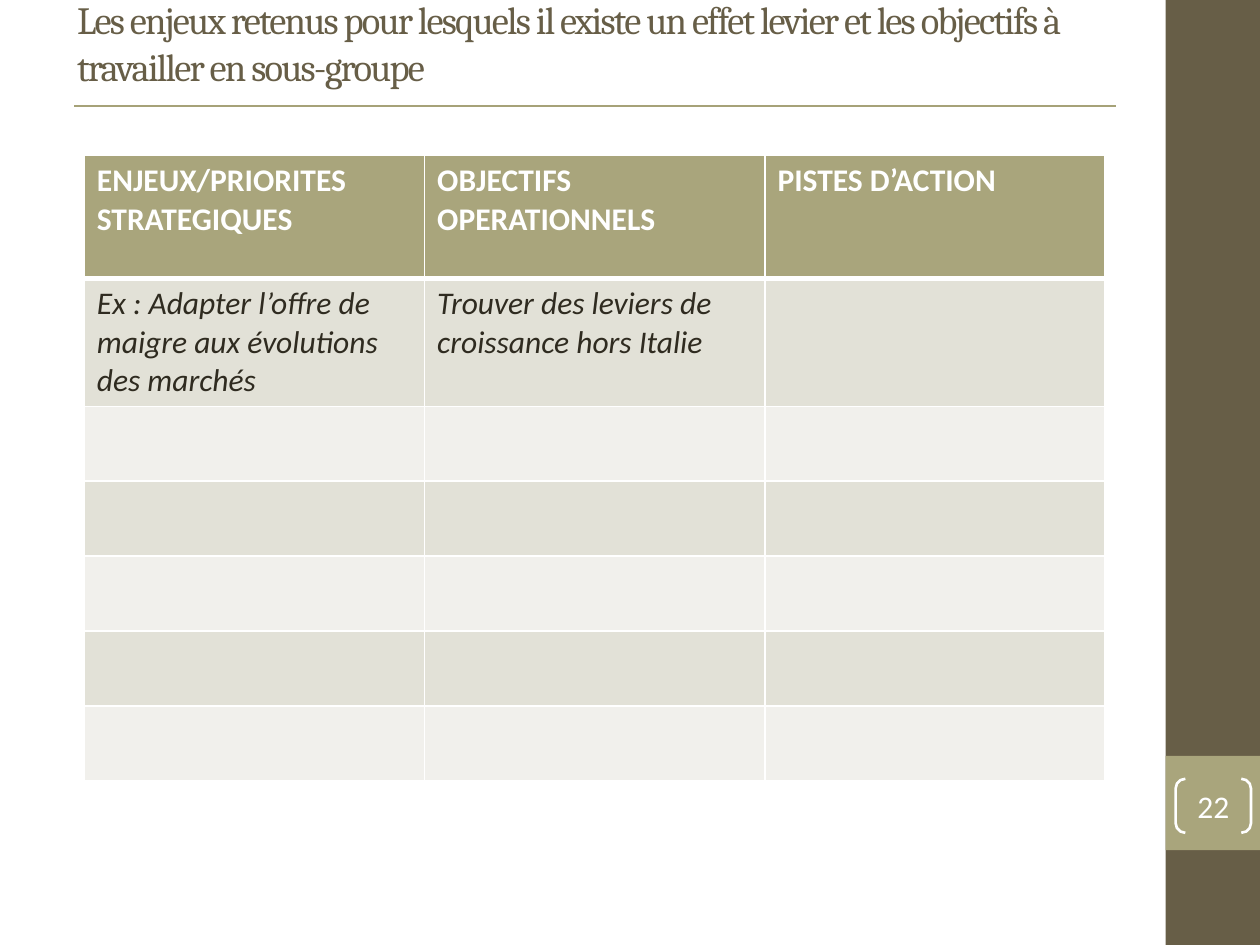
"""Build the slide of strategic priorities, objectives and lines of action."""
from lxml import etree
from pptx import Presentation
from pptx.dml.color import RGBColor
from pptx.enum.shapes import MSO_CONNECTOR, MSO_SHAPE
from pptx.enum.text import MSO_ANCHOR, MSO_AUTO_SIZE, PP_ALIGN
from pptx.oxml.ns import qn
from pptx.util import Cm, Pt

RECT, BRACKETS = MSO_SHAPE.RECTANGLE, MSO_SHAPE.DOUBLE_BRACKET
STRAIGHT = MSO_CONNECTOR.STRAIGHT
MIDDLE, LEFT, CENTER = MSO_ANCHOR.MIDDLE, PP_ALIGN.LEFT, PP_ALIGN.CENTER
NO_FIT = MSO_AUTO_SIZE.NONE

TITLE = ("Les enjeux retenus pour lesquels il existe un effet levier "
         "et les objectifs à travailler en sous-groupe")
PAGE = "22"
ROWS = [
    ("ENJEUX/PRIORITES STRATEGIQUES", "OBJECTIFS OPERATIONNELS", "PISTES D’ACTION"),
    ("Ex : Adapter l’offre de maigre aux évolutions des marchés",
     "Trouver des leviers de croissance hors Italie", ""),
] + [("", "", "")] * 5
HEIGHTS = [2.48, 2.56] + [1.51] * 5
COL_WIDTH = 6.86
BROWN, OLIVE, RULE, INK, WHITE = "675E47", "A9A57C", "A6A278", "2F2B20", "FFFFFF"
BANDS = ("F1F0EC", "E2E1D7")
BANDS_PANEL = [(0, 19.05, BROWN), (15.24, 1.9, OLIVE)]


def rgb(color):
    return RGBColor.from_string(color)


def style(p, size, name, color, bold=False, italic=False):
    f = p.font
    f.size, f.name, f.bold, f.italic = Pt(size), name, bold, italic
    f.color.rgb = rgb(color)


def add_border(cell, side, width):
    ln = etree.SubElement(cell._tc.get_or_add_tcPr(), qn("a:" + side), w=str(Pt(width)))
    fill = etree.SubElement(ln, qn("a:solidFill"))
    etree.SubElement(fill, qn("a:srgbClr"), val=WHITE)


def add_side_panel(s):
    for top, height, color in BANDS_PANEL:
        sp = s.shapes.add_shape(RECT, Cm(23.5), Cm(top), Cm(1.9), Cm(height))
        sp.shadow.inherit = False
        sp.fill.solid()
        sp.fill.fore_color.rgb = rgb(color)
        sp.line.fill.background()
    sp = s.shapes.add_shape(BRACKETS, Cm(23.7), Cm(15.7), Cm(1.52), Cm(1.09))
    sp.adjustments[0] = 0.18
    sp.shadow.inherit = False
    sp.fill.background()
    sp.line.color.rgb = rgb(WHITE)
    sp.line.width = Pt(1.5)
    tf = sp.text_frame
    tf.margin_left = tf.margin_top = tf.margin_right = tf.margin_bottom = 0
    tf.vertical_anchor = MIDDLE
    p = tf.paragraphs[0]
    p.text, p.alignment = PAGE, CENTER
    style(p, 18, "Calibri", WHITE)


def add_title(s):
    sp = s.shapes.title
    sp.left, sp.top, sp.width, sp.height = Cm(1.3), Cm(0.2), Cm(21.16), Cm(1.32)
    tf = sp.text_frame
    tf.word_wrap, tf.auto_size, tf.vertical_anchor = True, NO_FIT, MIDDLE
    p = tf.paragraphs[0]
    p.text, p.alignment = TITLE, LEFT
    style(p, 22, "Cambria", BROWN)
    p.runs[0].font._element.set("spc", "-100")
    line = s.shapes.add_connector(STRAIGHT, Cm(1.5), Cm(2.13), Cm(22.5), Cm(2.13))
    line.line.color.rgb = rgb(RULE)
    line.line.width = Pt(1)
    etree.SubElement(line._element.spPr, qn("a:effectLst"))


def add_priorities_table(s):
    cols = len(ROWS[0])
    table = s.shapes.add_table(len(ROWS), cols, Cm(1.7), Cm(3.13),
                               Cm(COL_WIDTH * cols), Cm(sum(HEIGHTS))).table
    for col in table.columns:
        col.width = Cm(COL_WIDTH)
    for i, (texts, height) in enumerate(zip(ROWS, HEIGHTS)):
        table.rows[i].height = Cm(height)
        header = i == 0
        for j, text in enumerate(texts):
            cell = table.cell(i, j)
            for side in ("lnL", "lnR", "lnT", "lnB"):
                thick = (header and side == "lnB") or (i == 1 and side == "lnT")
                add_border(cell, side, 3 if thick else 1)
            cell.fill.solid()
            cell.fill.fore_color.rgb = rgb(OLIVE if header else BANDS[i % 2])
            p = cell.text_frame.paragraphs[0]
            p.text = text
            style(p, 18, "Calibri", WHITE if header else INK, header, not header)


def main():
    prs = Presentation()
    prs.slide_width, prs.slide_height = Cm(25.4), Cm(19.05)
    s = prs.slides.add_slide(prs.slide_layouts[5])
    add_side_panel(s)
    add_title(s)
    add_priorities_table(s)
    prs.save("out.pptx")


if __name__ == "__main__":
    main()
